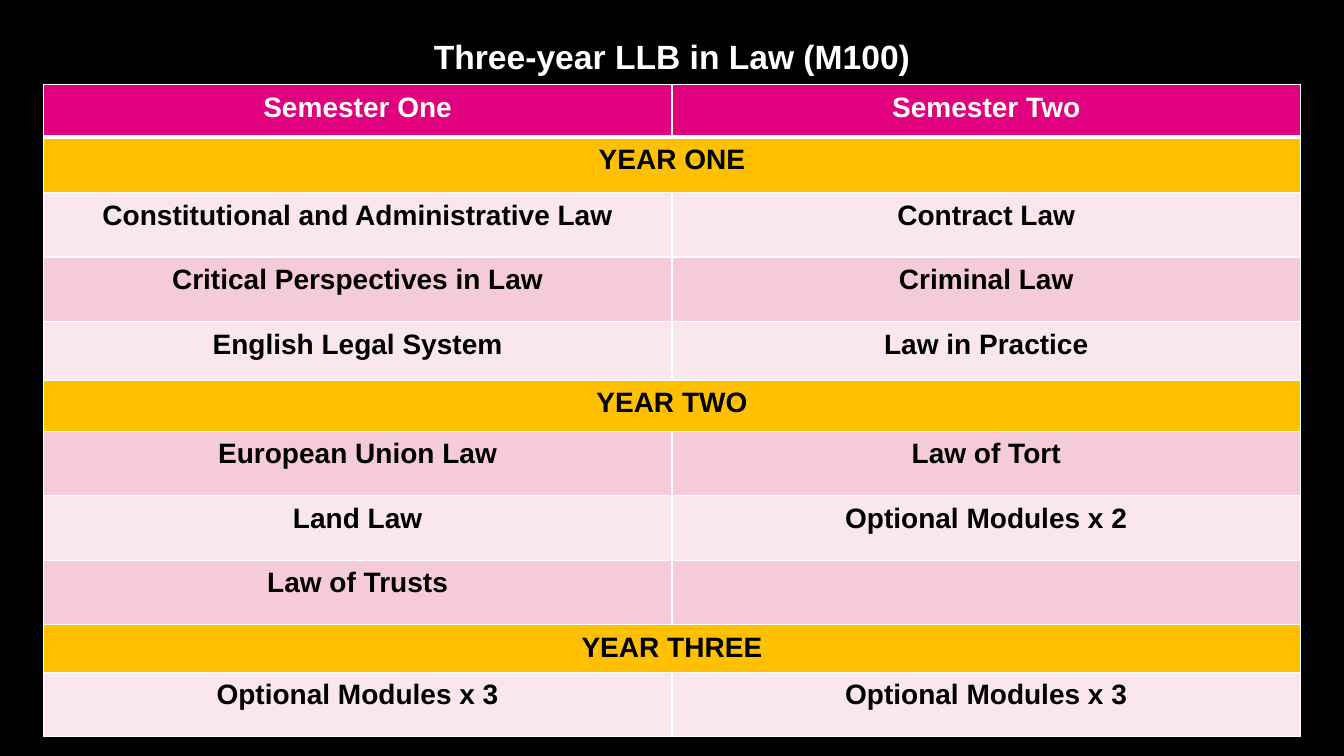
from lxml.etree import SubElement
from pptx import Presentation
from pptx.dml.color import RGBColor
from pptx.enum.text import MSO_ANCHOR, PP_ALIGN
from pptx.oxml.ns import qn
from pptx.util import Inches, Pt

BLACK, WHITE = "000000", "FFFFFF"
HEADER_PINK, YEAR_GOLD = "E1007D", "FFC000"
MODULE_BANDS = ("F9E7EC", "F4CBD7")
LEFT, WIDTH = 0.43, 12.47

# Each row: height in inches and its texts; a single text spans both semesters
HEADER = (0.52, ("Semester One", "Semester Two"))
COURSE_ROWS = [
    (0.55, ("YEAR ONE",)),
    (0.64, ("Constitutional and Administrative Law", "Contract Law")),
    (0.64, ("Critical Perspectives in Law", "Criminal Law")),
    (0.58, ("English Legal System", "Law in Practice")),
    (0.51, ("YEAR TWO",)),
    (0.64, ("European Union Law", "Law of Tort")),
    (0.64, ("Land Law", "Optional Modules x 2")),
    (0.64, ("Law of Trusts", "")),
    (0.47, ("YEAR THREE",)),
    (0.64, ("Optional Modules x 3", "Optional Modules x 3")),
]


def color(value):
    return RGBColor.from_string(value)


def write_text(paragraph, text, size, text_color, line_spacing):
    paragraph.alignment = PP_ALIGN.CENTER
    paragraph.line_spacing = line_spacing
    run = paragraph.add_run()
    run.text = text
    run.font.name = "Arial"
    run.font.size = Pt(size)
    run.font.bold = True
    run.font.color.rgb = color(text_color)


def set_borders(cell, top, bottom):
    """Draw white borders; top and bottom are widths in points."""
    properties = cell._tc.get_or_add_tcPr()
    sides = (("a:lnL", 1), ("a:lnR", 1), ("a:lnT", top), ("a:lnB", bottom))
    for position, (tag, width) in enumerate(sides):
        line = SubElement(properties, qn(tag), w=str(Pt(width)))
        fill = SubElement(line, qn("a:solidFill"))
        SubElement(fill, qn("a:srgbClr"), val=WHITE)
        properties.insert(position, line)  # borders come before the fill


def fill_row(table, index, texts, fill_color, text_color):
    cells = [table.cell(index, column) for column in range(2)]
    for cell in cells:
        cell.fill.solid()
        cell.fill.fore_color.rgb = color(fill_color)
        set_borders(cell, 3 if index == 1 else 1, 3 if index == 0 else 1)
        cell.margin_left = cell.margin_right = Inches(0.09)
        cell.margin_top = cell.margin_bottom = Inches(0.05)
    if len(texts) == 1:
        cells[0].merge(cells[1])
    for cell, text in zip(cells, texts):
        if text:
            paragraph = cell.text_frame.paragraphs[0]
            write_text(paragraph, text, 20, text_color, 1.07)
            paragraph.space_after = Pt(8)


def add_title(slide, text):
    box = slide.shapes.add_textbox(Inches(LEFT), Inches(0.2), Inches(WIDTH), Inches(0.9))
    frame = box.text_frame
    frame.word_wrap = True
    frame.vertical_anchor = MSO_ANCHOR.TOP
    frame.margin_left = frame.margin_right = frame.margin_bottom = 0
    frame.margin_top = Inches(0.27)
    write_text(frame.paragraphs[0], text, 24, WHITE, 0.7)


def add_course_table(slide):
    rows = [HEADER] + COURSE_ROWS
    height = sum(row_height for row_height, _ in rows)
    frame = slide.shapes.add_table(
        len(rows), 2, Inches(LEFT), Inches(0.84), Inches(WIDTH), Inches(height))
    table = frame.table
    table.horz_banding = False
    for row, (row_height, _) in zip(table.rows, rows):
        row.height = Inches(row_height)

    fill_row(table, 0, HEADER[1], HEADER_PINK, WHITE)
    module_count = 0
    for index, (_, texts) in enumerate(COURSE_ROWS, start=1):
        if len(texts) == 1:
            fill_color = YEAR_GOLD
        else:
            fill_color = MODULE_BANDS[module_count % 2]
            module_count += 1
        fill_row(table, index, texts, fill_color, BLACK)


def main():
    presentation = Presentation()
    presentation.slide_width = Inches(13.33)
    presentation.slide_height = Inches(7.5)
    slide = presentation.slides.add_slide(presentation.slide_layouts[6])

    # Background
    slide.background.fill.solid()
    slide.background.fill.fore_color.rgb = color(BLACK)

    # Title and course plan
    add_title(slide, "Three-year LLB in Law (M100)")
    add_course_table(slide)

    presentation.save("out.pptx")


if __name__ == "__main__":
    main()
